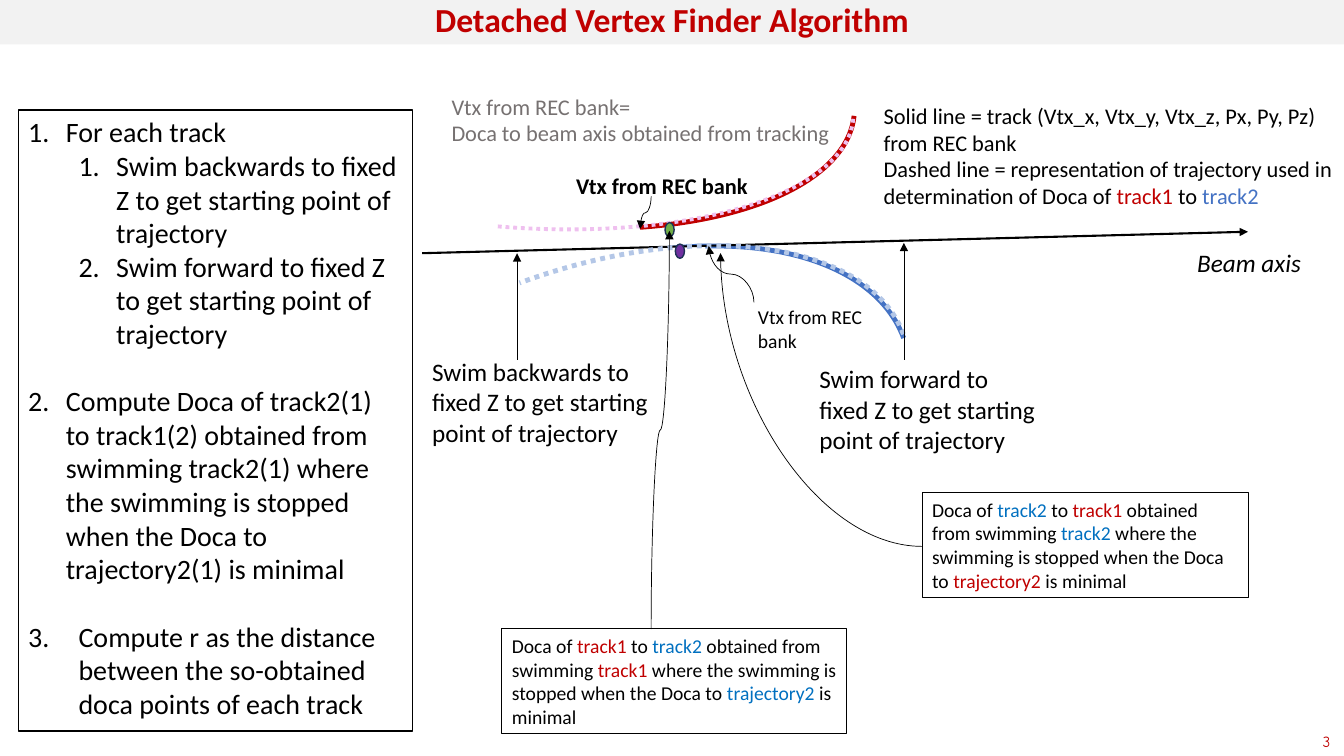
import pptx
import pptx.util
import pptx.dml.color
import pptx.enum.dml
import pptx.enum.shapes
import pptx.enum.text
import pptx.oxml.ns
from lxml import etree

Cm = pptx.util.Cm
Pt = pptx.util.Pt
RGBColor = pptx.dml.color.RGBColor
Kind = pptx.enum.shapes.MSO_SHAPE
Wire = pptx.enum.shapes.MSO_CONNECTOR
Align = pptx.enum.text.PP_ALIGN
Anchor = pptx.enum.text.MSO_ANCHOR
qn = pptx.oxml.ns.qn

BLACK = RGBColor(0x00, 0x00, 0x00)
WHITE = RGBColor(0xFF, 0xFF, 0xFF)
PALE = RGBColor(0xF2, 0xF2, 0xF2)
GREY = RGBColor(0x76, 0x71, 0x71)
RED = RGBColor(0xC0, 0x00, 0x00)
BLUE = RGBColor(0x44, 0x72, 0xC4)
SKY = RGBColor(0x00, 0x70, 0xC0)
LIGHT = RGBColor(0xB4, 0xC7, 0xE7)
PINK = RGBColor(0xEF, 0xC0, 0xEF)
PURPLE = RGBColor(0x70, 0x30, 0xA0)
GREEN = RGBColor(0x70, 0xAD, 0x47)
NAVY = RGBColor(0x1E, 0x32, 0x56)


class Page:
    def __init__(self, slide, font):
        self.slide = slide
        self.font = font

    def put(self, para, runs, size, color, bold=False, slant=False, font=None):
        for part in runs:
            words, tint = (part, color) if isinstance(part, str) else part
            run = para.add_run()
            run.text = words
            run.font.size = Pt(size)
            run.font.name = font or self.font
            run.font.color.rgb = tint
            run.font.bold = bold
            run.font.italic = slant

    def fill(self, shape, paras, size, color=BLACK, align=Align.LEFT,
             anchor=Anchor.TOP, **style):
        frame = shape.text_frame
        frame.word_wrap = True
        frame.vertical_anchor = anchor
        for i, runs in enumerate(paras):
            para = frame.add_paragraph() if i else frame.paragraphs[0]
            para.alignment = align
            self.put(para, runs, size, color, **style)

    def shape(self, kind, box, fill=None, line=None, width=1):
        item = self.slide.shapes.add_shape(kind, *map(Cm, box))
        item.shadow.inherit = False
        if fill is None:
            item.fill.background()
        else:
            item.fill.solid()
            item.fill.fore_color.rgb = fill
        if line is None:
            item.line.fill.background()
        else:
            item.line.color.rgb = line
            item.line.width = Pt(width)
        return item

    def text(self, box, paras, size, **style):
        item = self.slide.shapes.add_textbox(*map(Cm, box))
        self.fill(item, paras, size, **style)

    def arc(self, box, turn, color, width, flip=False, dots=False):
        item = self.shape(Kind.ARC, box, None, color, width)
        item.rotation = turn
        if flip:
            item.element.spPr.find(qn("a:xfrm")).set("flipH", "1")
        if dots:
            item.line.dash_style = pptx.enum.dml.MSO_LINE.ROUND_DOT

    def arrow(self, start, end, width=0.5, kind=Wire.STRAIGHT):
        item = self.slide.shapes.add_connector(kind, *map(Cm, start + end))
        item.line.color.rgb = BLACK
        item.line.width = Pt(width)
        props = item.element.spPr
        etree.SubElement(props.find(qn("a:ln")), qn("a:tailEnd"), type="triangle")
        etree.SubElement(props, qn("a:effectLst"))
        return item

    def bend(self, start, end):
        item = self.arrow(start, end, kind=Wire.CURVE)
        item.element.spPr.find(qn("a:prstGeom")).set("prst", "curvedConnector2")

    def curve(self, start, end):
        (x, y), (u, v) = start, end
        wide, high = abs(v - y), abs(u - x)
        left, top = (x + u - wide) / 2, (y + v - high) / 2
        item = self.arrow((left, top), (left + wide, top + high), kind=Wire.CURVE)
        down = v > y
        frame = item.element.spPr.find(qn("a:xfrm"))
        frame.set("rot", str((90 if down else 270) * 60000))
        if (u < x) != down:
            frame.set("flipV", "1")

    def steps(self, box, rows, size):
        item = self.shape(Kind.RECTANGLE, box, WHITE, BLACK)
        self.fill(item, [[words] for words, *_ in rows], size)
        for para, (_, level, left, hang, gap) in zip(item.text_frame.paragraphs, rows):
            para.level = level
            para.space_before = Pt(gap)
            props = para._p.get_or_add_pPr()
            props.set("marL", str(Cm(left)))
            props.set("indent", str(-Cm(hang)))
            etree.SubElement(props, qn("a:buFont"), typeface="+mj-lt")
            etree.SubElement(props, qn("a:buAutoNum"), type="arabicPeriod")


def doca(first, second, last):
    return [["Doca of ", first, " to ", second, " obtained from swimming ", first,
             " where the swimming is stopped when the Doca to ", last, " is minimal"]]


def main():
    deck = pptx.Presentation()
    deck.slide_width, deck.slide_height = Cm(33.87), Cm(19.05)
    page = Page(deck.slides.add_slide(deck.slide_layouts[6]), "Calibri")

    title = page.shape(Kind.RECTANGLE, (0, -0.15, 33.87, 1.27), PALE)
    page.fill(title, [["Detached Vertex Finder Algorithm"]], 24, color=RED,
              align=Align.CENTER, anchor=Anchor.MIDDLE, bold=True)
    page.text((32.87, 18.29, 0.91, 0.76), [["3"]], 11, color=RED,
              align=Align.RIGHT, anchor=Anchor.MIDDLE, font="Comic Neue")

    page.arc((9.98, -5.89, 7.19, 15.98), 95.9, RED, 3.5)
    page.arc((10.64, 3.25, 9.14, 16.13), 69.7, BLUE, 3.5, flip=True)
    page.text((29.92, 6.12, 3.51, 1.02), [["Beam axis"]], 18, slant=True)
    page.shape(Kind.RECTANGLE, (13.49, 6.22, 4.29, 1.27), WHITE)
    page.arrow((10.64, 6.38), (31.45, 5.84), 1.5)
    page.arc((10.11, 2.79, 9.14, 17.25), 69.7, LIGHT, 3.5, flip=True, dots=True)
    page.shape(Kind.RECTANGLE, (11.84, 4.78, 4.29, 1.27), WHITE)
    page.arc((9.32, -6.5, 6.93, 17.5), 94.9, PINK, 2.75, dots=True)

    page.text((11.13, 2.21, 10.82, 1.63),
              [["Vtx from REC bank="], ["Doca to beam axis obtained from tracking"]],
              16, color=GREY)
    page.text((14.27, 4.22, 6.05, 0.94), [["Vtx from REC bank"]], 16, bold=True)
    page.curve((16.41, 4.95), (16.13, 5.77))
    page.text((18.85, 7.57, 4.19, 1.45), [["Vtx from REC bank"]], 14)
    page.curve((19, 7.62), (17.86, 6.2))
    page.text((22.02, 2.44, 11.81, 3),
              [["Solid line = track (Vtx_x, Vtx_y, Vtx_z, Px, Py, Pz) from REC bank"],
               ["Dashed line = representation of trajectory used in determination of Doca of ",
                ("track1", RED), " to ", ("track2", BLUE)]], 16)

    for way, left, top, x, tip in (("backwards", 10.64, 8.86, 13.03, 6.38),
                                   ("forward", 20.4, 9.04, 22.78, 6.12)):
        page.text((left, top, 6.05, 2.57),
                  [[f"Swim {way} to fixed Z to get starting point of trajectory"]], 18)
        page.arrow((x, 9.06), (x, tip))

    for x, y, color in ((17.02, 6.15, PURPLE), (16.76, 5.61, GREEN)):
        page.shape(Kind.OVAL, (x, y, 0.23, 0.36), color, NAVY)

    page.bend((23.24, 13.77), (18.16, 6.38))
    page.curve((16.41, 15.85), (16.87, 5.82))
    one, two = ("track1", RED), ("track2", SKY)
    for box, paras in (
            ((23.24, 12.42, 8.23, 2.64), doca(two, one, ("trajectory2", RED))),
            ((12.65, 15.85, 8.69, 2.64), doca(one, two, ("trajectory2", SKY)))):
        note = page.shape(Kind.RECTANGLE, box, None, BLACK, 0.75)
        page.fill(note, paras, 14)

    page.steps((0.46, 2.77, 9.93, 15.65), [
        ("For each track", 0, 0.95, 0.95, 0),
        ("Swim backwards to fixed Z to get starting point of trajectory", 1, 2.22, 0.95, 0),
        ("Swim forward to fixed Z to get starting point of trajectory", 1, 2.22, 0.95, 0),
        ("Compute Doca of track2(1) to track1(2) obtained from swimming track2(1) where "
         "the swimming is stopped when the Doca to trajectory2(1) is minimal",
         0, 0.95, 0.95, 24),
        ("Compute r as the distance between the so-obtained doca points of each track",
         0, 1.27, 1.27, 24)], 20)

    deck.save("out.pptx")


if __name__ == "__main__":
    main()
